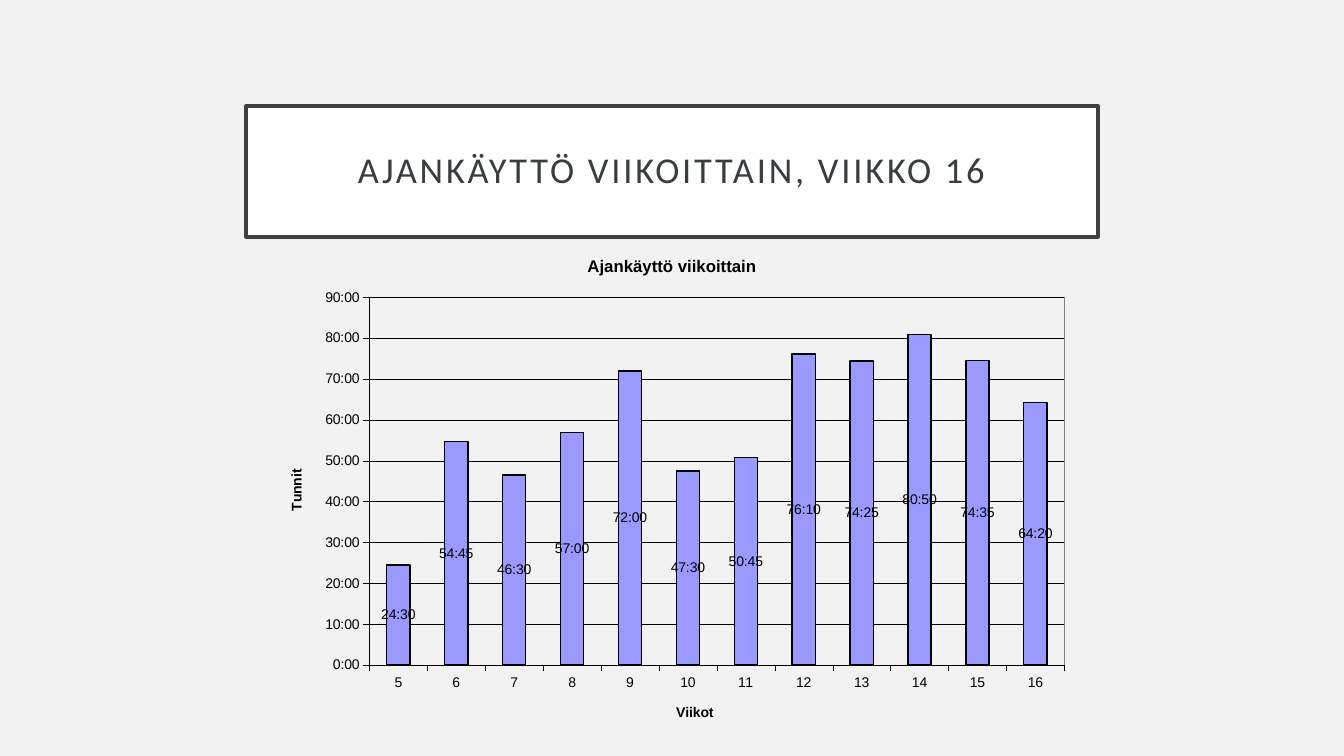
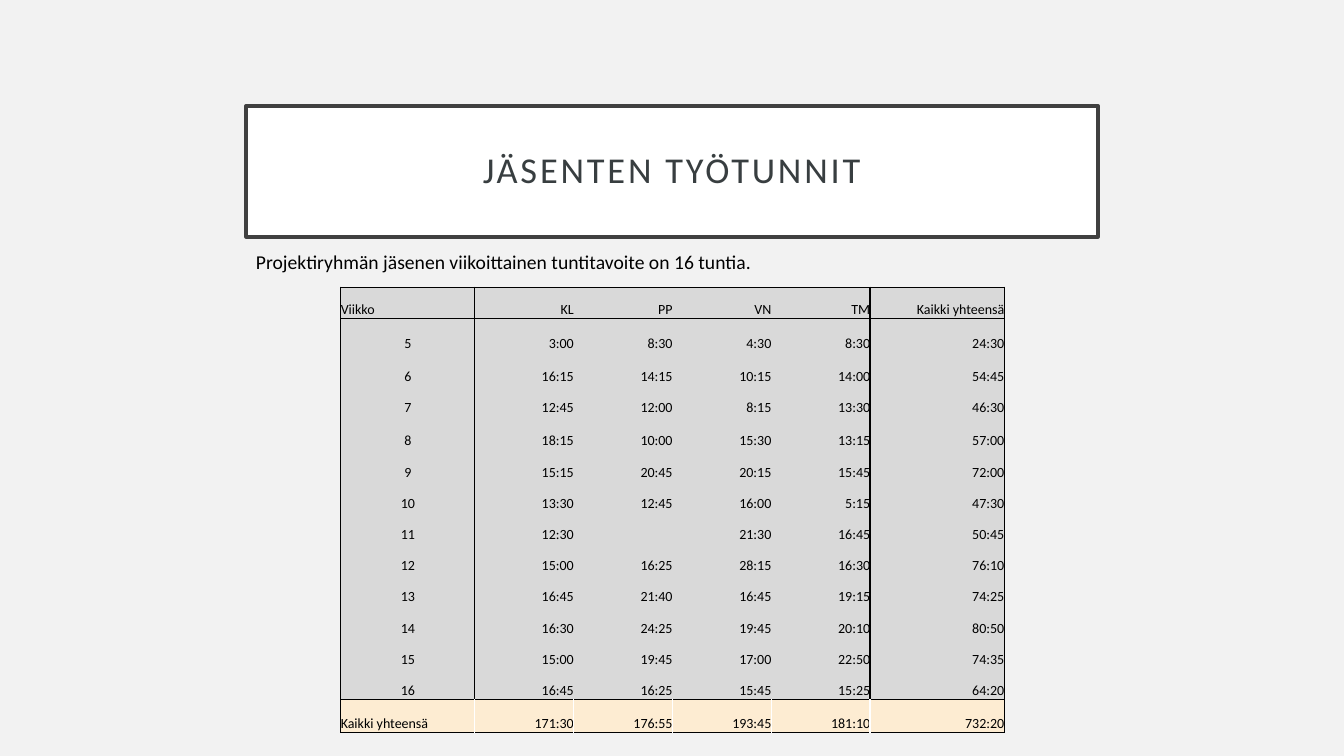
from lxml import etree
from pptx import Presentation
from pptx.chart.data import CategoryChartData
from pptx.dml.color import RGBColor
from pptx.enum.chart import XL_CHART_TYPE as CHART, XL_LABEL_POSITION as LABEL, XL_TICK_MARK as TICK
from pptx.enum.text import MSO_ANCHOR as ANCHOR, MSO_AUTO_SIZE as AUTOSIZE, PP_ALIGN as ALIGN
from pptx.oxml import parse_xml
from pptx.oxml.ns import nsdecls, qn
from pptx.util import Inches, Pt

COLORS = {
    "background": "F2F2F2", "white": "FFFFFF", "frame": "404040", "title": "383E40",
    "black": "000000", "bar": "9999FF", "plot_edge": "808080",
    "body": "D9D9D9", "total": "FDECD2",
}
TEXT_FONT, CHART_FONT = "Calibri", "Arial"
TIME_FORMAT = "[h]:mm"

CHART_SLIDE_TITLE = "AJANKÄYTTÖ VIIKOITTAIN, VIIKKO 16"
CHART_TITLE, WEEK_AXIS, HOUR_AXIS = "Ajankäyttö viikoittain", "Viikot", "Tunnit"
TABLE_SLIDE_TITLE = "JÄSENTEN TYÖTUNNIT"
GOAL = "Projektiryhmän jäsenen viikoittainen tuntitavoite on 16 tuntia."
HEADER = ("Viikko", "KL", "PP", "VN", "TM", "Kaikki yhteensä")
WEEKS = [
    ("5", "3:00", "8:30", "4:30", "8:30", "24:30"),
    ("6", "16:15", "14:15", "10:15", "14:00", "54:45"),
    ("7", "12:45", "12:00", "8:15", "13:30", "46:30"),
    ("8", "18:15", "10:00", "15:30", "13:15", "57:00"),
    ("9", "15:15", "20:45", "20:15", "15:45", "72:00"),
    ("10", "13:30", "12:45", "16:00", "5:15", "47:30"),
    ("11", "12:30", "", "21:30", "16:45", "50:45"),
    ("12", "15:00", "16:25", "28:15", "16:30", "76:10"),
    ("13", "16:45", "21:40", "16:45", "19:15", "74:25"),
    ("14", "16:30", "24:25", "19:45", "20:10", "80:50"),
    ("15", "15:00", "19:45", "17:00", "22:50", "74:35"),
    ("16", "16:45", "16:25", "15:45", "15:25", "64:20"),
]
TOTALS = ("Kaikki yhteensä", "171:30", "176:55", "193:45", "181:10", "732:20")

COLUMN_WIDTHS = (1.33, 0.98, 0.98, 0.98, 0.98, 1.33)
ROW_HEIGHT, TALL_ROW_HEIGHT, TALL_ROWS = 0.31, 0.33, (1, 2, 4, 13)
PLOT_LAYOUT = {"x": 0.13, "y": 0.12, "w": 0.85, "h": 0.73}


def rgb(name):
    return RGBColor.from_string(COLORS[name])


def box(left, top, width, height):
    return [Inches(v) for v in (left, top, width, height)]


def set_font(font, size, color="black", name=TEXT_FONT, bold=False):
    font.size, font.name, font.bold = Pt(size), name, bold
    font.color.rgb = rgb(color)


def set_line(line, color, width):
    line.color.rgb = rgb(color)
    line.width = Pt(width)


def add_titled_slide(prs, title):
    slide = prs.slides.add_slide(prs.slide_layouts[5])
    sp = slide.shapes.title
    sp.left, sp.top, sp.width, sp.height = box(2.44, 1.05, 8.45, 1.3)
    sp.fill.solid()
    sp.fill.fore_color.rgb = rgb("white")
    set_line(sp.line, "frame", 2.5)
    tf = sp.text_frame
    tf.text = title
    tf.word_wrap, tf.auto_size = True, AUTOSIZE.NONE
    tf.vertical_anchor = ANCHOR.MIDDLE
    tf.margin_left = tf.margin_right = tf.margin_top = tf.margin_bottom = Inches(0.2)
    p = tf.paragraphs[0]
    p.alignment, p.line_spacing = ALIGN.CENTER, 0.9
    set_font(p.font, 26, "title")
    p.runs[0]._r.get_or_add_rPr().set("spc", "200")
    return slide


def days(time):
    hours, minutes = time.split(":")
    return round((int(hours) + int(minutes) / 60) / 24, 6)


def set_chart_title(owner, text, size):
    tf = owner.text_frame
    tf.text = text
    set_font(tf.paragraphs[0].font, size, name=CHART_FONT, bold=True)


def style_plot_area(chart):
    plot_area = chart._chartSpace.chart.plotArea
    for old in plot_area.findall(qn("c:layout")):
        plot_area.remove(old)
    sizes = "".join(f'<c:{k} val="{v}"/>' for k, v in PLOT_LAYOUT.items())
    plot_area.insert(0, parse_xml(
        f'<c:layout {nsdecls("c")}><c:manualLayout><c:layoutTarget val="inner"/>'
        f'<c:xMode val="edge"/><c:yMode val="edge"/>{sizes}</c:manualLayout></c:layout>'))
    plot_area.append(parse_xml(
        f'<c:spPr {nsdecls("c", "a")}><a:noFill/><a:ln w="9525"><a:solidFill>'
        f'<a:srgbClr val="{COLORS["plot_edge"]}"/></a:solidFill></a:ln></c:spPr>'))


def add_hours_chart(slide):
    data = CategoryChartData(number_format=TIME_FORMAT)
    data.categories = [week[0] for week in WEEKS]
    data.add_series("Series 1", [days(week[-1]) for week in WEEKS])
    chart = slide.shapes.add_chart(
        CHART.COLUMN_STACKED, *box(2.61, 2.35, 8.11, 5), data).chart
    set_font(chart.font, 10, name=CHART_FONT)
    chart.has_legend = False
    chart.has_title = True
    set_chart_title(chart.chart_title, CHART_TITLE, 12)

    for axis, title in ((chart.category_axis, WEEK_AXIS), (chart.value_axis, HOUR_AXIS)):
        axis.has_title = True
        set_chart_title(axis.axis_title, title, 10)
        axis.major_tick_mark, axis.minor_tick_mark = TICK.OUTSIDE, TICK.NONE
        set_font(axis.tick_labels.font, 10, name=CHART_FONT)
        set_line(axis.format.line, "black", 0.25)
    hours = chart.value_axis
    hours.minimum_scale, hours.maximum_scale, hours.major_unit = 0, 90 / 24, 10 / 24
    hours.has_major_gridlines = True
    set_line(hours.major_gridlines.format.line, "black", 0.25)
    hours.tick_labels.number_format = TIME_FORMAT
    hours.tick_labels.number_format_is_linked = False

    plot = chart.plots[0]
    plot.gap_width, plot.overlap, plot.vary_by_categories = 150, 100, False
    bars = plot.series[0]
    bars.format.fill.solid()
    bars.format.fill.fore_color.rgb = rgb("bar")
    set_line(bars.format.line, "black", 1)
    labels = bars.data_labels
    labels.show_value, labels.position = True, LABEL.CENTER
    labels.number_format, labels.number_format_is_linked = TIME_FORMAT, False
    set_font(labels.font, 10, name=CHART_FONT)
    style_plot_area(chart)


def set_borders(cell, borders):
    tc_pr = cell._tc.get_or_add_tcPr()
    for side, color in borders.items():
        ln = etree.SubElement(tc_pr, qn(f"a:ln{side}"), w=str(Pt(1)))
        if color:
            fill = etree.SubElement(ln, qn("a:solidFill"))
            etree.SubElement(fill, qn("a:srgbClr"), val=COLORS[color])
        else:
            etree.SubElement(ln, qn("a:noFill"))


def cell_borders(row, col, last_row, last_col):
    inner = "white" if row == last_row else None
    left_cols = (0,) if inner else (0, 1, last_col)
    right_cols = (last_col,) if inner else (0, last_col - 1, last_col)
    return {
        "L": "black" if col in left_cols else inner,
        "R": "black" if col in right_cols else inner,
        "T": "black" if row in (0, 1, last_row) else None,
        "B": "black" if row in (0, last_row - 1, last_row) else None,
    }


def add_hours_table(slide):
    rows = [HEADER, *WEEKS, TOTALS]
    heights = [TALL_ROW_HEIGHT if i in TALL_ROWS else ROW_HEIGHT for i in range(len(rows))]
    last_row, last_col = len(rows) - 1, len(HEADER) - 1
    table = slide.shapes.add_table(
        len(rows), len(HEADER), *box(3.38, 2.85, sum(COLUMN_WIDTHS), sum(heights))).table
    table.first_row = table.horz_banding = False
    for column, width in zip(table.columns, COLUMN_WIDTHS):
        column.width = Inches(width)
    for i, (texts, height) in enumerate(zip(rows, heights)):
        table.rows[i].height = Inches(height)
        for j, text in enumerate(texts):
            cell = table.cell(i, j)
            cell.text = text
            cell.vertical_anchor = ANCHOR.BOTTOM
            cell.margin_left = cell.margin_right = cell.margin_top = cell.margin_bottom = 0
            set_borders(cell, cell_borders(i, j, last_row, last_col))
            cell.fill.solid()
            cell.fill.fore_color.rgb = rgb("total" if i == last_row else "body")
            p = cell.text_frame.paragraphs[0]
            set_font(p.font, 10)
            if j:
                p.alignment = ALIGN.RIGHT
            else:
                p.alignment = ALIGN.LEFT if i in (0, last_row) else ALIGN.CENTER


def add_goal(slide):
    tf = slide.shapes.add_textbox(*box(2.44, 2.43, 7.59, 0.34)).text_frame
    tf.word_wrap, tf.auto_size = True, AUTOSIZE.SHAPE_TO_FIT_TEXT
    tf.text = GOAL
    set_font(tf.paragraphs[0].font, 14)


def main():
    prs = Presentation()
    prs.slide_width, prs.slide_height = Inches(13.33), Inches(7.5)
    background = prs.slide_master.background.fill
    background.solid()
    background.fore_color.rgb = rgb("background")

    add_hours_chart(add_titled_slide(prs, CHART_SLIDE_TITLE))

    slide = add_titled_slide(prs, TABLE_SLIDE_TITLE)
    add_goal(slide)
    add_hours_table(slide)
    prs.save("out.pptx")


if __name__ == "__main__":
    main()
